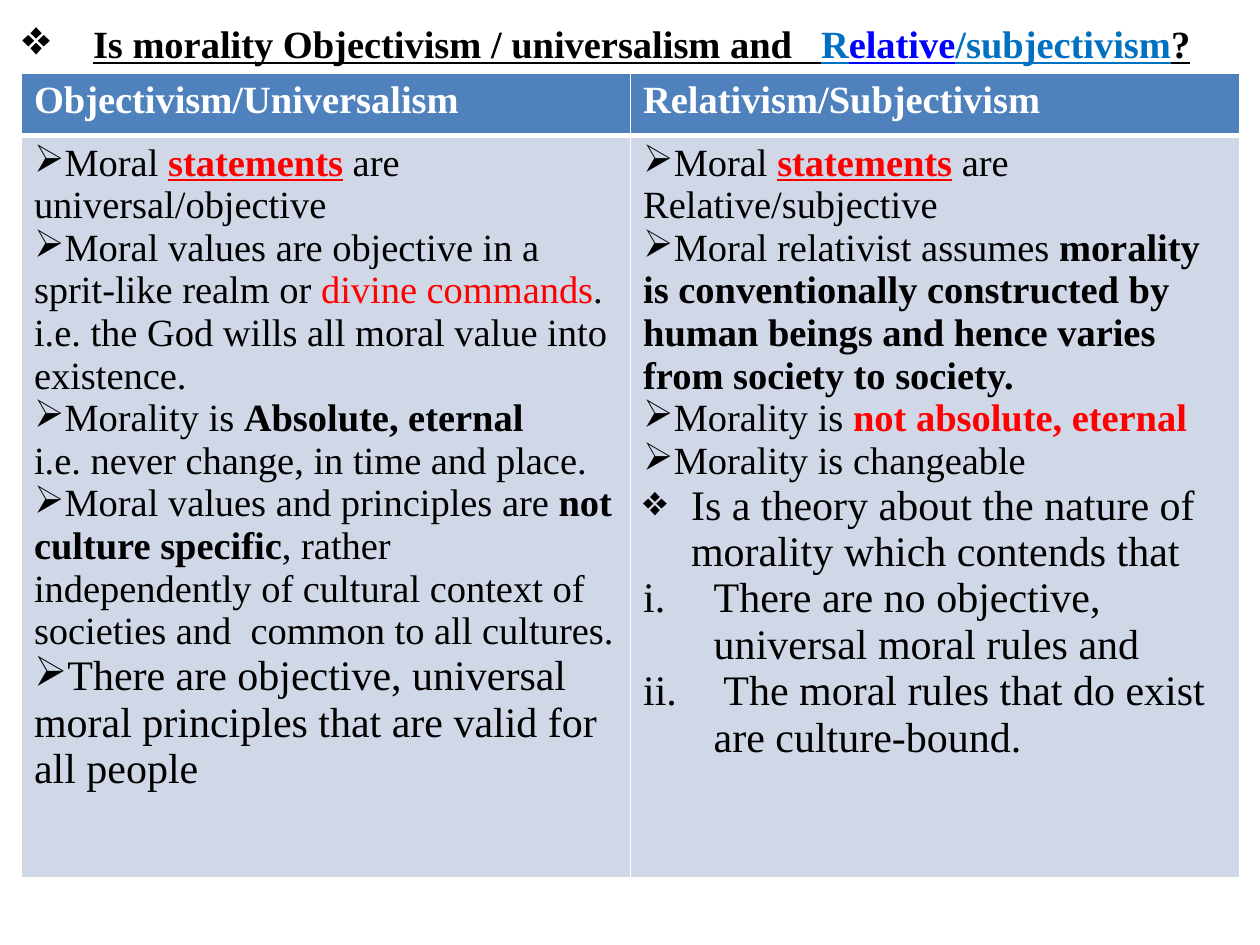
import pptx
import pptx.dml.color
import pptx.oxml.ns
import pptx.util
from lxml import etree

COLORS = {"black": "000000", "white": "FFFFFF", "red": "FF0000",
          "blue": "0070C0", "deep": "0000FF", "head": "4F81BD", "body": "D0D8E8"}
ARROW, DIAMOND = "➢", "❖"

# Spans are (text, style letters): b bold, u underline, and a colour name after a colon
TITLE = [("Is morality Objectivism / universalism and   ", "bu"), ("R", "bu:blue"),
         ("elative", "bu:deep"), ("/subjectivism", "bu:blue"), ("?", "bu")]
HEADINGS = ["Objectivism/Universalism", "Relativism/Subjectivism"]

# Paragraphs are (bullet, size, indent, spans)
OBJECTIVISM = [
    (ARROW, 22, 0, [("Moral ", ""), ("statements", "bu:red"),
                    (" are universal/objective", "")]),
    (ARROW, 22, 0, [("Moral values are objective in a sprit-like realm or ", ""),
                    ("divine commands", ":red"),
                    (". i.e. the God wills all moral value into existence.", "")]),
    (ARROW, 22, 0, [("Morality is ", ""), ("Absolute, eternal", "b")]),
    (None, 22, 0, [("i.e. never change, in time and place.", "")]),
    (ARROW, 22, 0, [("Moral values and principles are ", ""), ("not culture specific", "b"),
                    (", rather  independently of cultural context of societies and  "
                     "common to all cultures.", "")]),
    (ARROW, 24, 0, [("There are objective, universal moral principles that are valid "
                     "for all people", "")]),
]
RELATIVISM = [
    (ARROW, 22, 0, [("Moral ", ""), ("statements", "bu:red"),
                    (" are Relative/subjective", "")]),
    (ARROW, 22, 0, [("Moral relativist assumes ", ""),
                    ("morality is conventionally constructed by human beings and hence "
                     "varies from society to society.", "b")]),
    (ARROW, 22, 0, [("Morality is ", ""), ("not absolute, eternal", "b:red")]),
    (ARROW, 22, 0, [("Morality is changeable", "")]),
    (DIAMOND, 24, 0.38, [("Is a theory about the nature of morality which contends that", "")]),
    ("roman", 24, 0.56, [("There are no objective, universal moral rules and", "")]),
    ("roman", 24, 0.56, [(" The moral rules that do exist are culture-bound.", "")]),
]


def add_element(parent, tag, **attributes):
    return etree.SubElement(parent, pptx.oxml.ns.qn(tag), attributes)


class SlideBuilder:
    font = "Times New Roman"
    width, height = pptx.util.Inches(10), pptx.util.Inches(7.5)

    def __init__(self, deck):
        deck.slide_width, deck.slide_height = self.width, self.height
        self.page = deck.slides.add_slide(deck.slide_layouts[6])

    def area(self, left, top, width, height):
        """Turn shares of the slide into lengths."""
        return (int(left * self.width), int(top * self.height),
                int(width * self.width), int(height * self.height))

    def color(self, name):
        return pptx.dml.color.RGBColor.from_string(COLORS[name])

    def fill_paragraph(self, para, bullet, size, indent, spans, color="black",
                       bullet_scale=100):
        properties = para._p.get_or_add_pPr()
        properties.set("marL", str(pptx.util.Inches(indent)))
        properties.set("indent", str(pptx.util.Inches(-indent)))
        if bullet:
            add_element(properties, "a:buSzPct", val=str(bullet_scale * 1000))
        if bullet == "roman":
            add_element(properties, "a:buAutoNum", type="romanLcPeriod")
        elif bullet:
            add_element(properties, "a:buChar", char=bullet)
        else:
            add_element(properties, "a:buNone")
        for text, style in spans:
            letters, _, tint = style.partition(":")
            span = para.add_run()
            span.text = text
            span.font.name, span.font.size = self.font, pptx.util.Pt(size)
            span.font.bold, span.font.underline = "b" in letters, "u" in letters
            span.font.color.rgb = self.color(tint or color)

    def title(self, area, spans):
        frame = self.page.shapes.add_textbox(*self.area(*area)).text_frame
        frame.word_wrap = True
        frame.margin_top = pptx.util.Inches(0.16)
        self.fill_paragraph(frame.paragraphs[0], DIAMOND, 22, 0.56, spans, bullet_scale=127)

    def cell(self, cell, fill, paragraphs, color="black", bottom=1):
        properties = cell._tc.get_or_add_tcPr()
        for side, points in (("L", 1), ("R", 1), ("T", 1), ("B", bottom)):
            line = add_element(properties, f"a:ln{side}", w=str(pptx.util.Pt(points)))
            add_element(add_element(line, "a:solidFill"), "a:srgbClr", val=COLORS["white"])
        cell.fill.solid()
        cell.fill.fore_color.rgb = self.color(fill)
        frame = cell.text_frame
        for number, content in enumerate(paragraphs):
            para = frame.add_paragraph() if number else frame.paragraphs[0]
            self.fill_paragraph(para, *content, color=color)

    def comparison(self, area, header_share, headings, columns):
        area = self.area(*area)
        table = self.page.shapes.add_table(2, len(headings), *area).table
        table.horz_banding = False
        table.rows[0].height = int(area[3] * header_share)
        table.rows[1].height = area[3] - table.rows[0].height
        for number, (heading, paragraphs) in enumerate(zip(headings, columns)):
            self.cell(table.cell(0, number), "head", [(None, 22, 0, [(heading, "b")])],
                      color="white", bottom=3)
            self.cell(table.cell(1, number), "body", paragraphs)


def main():
    deck = pptx.Presentation()
    slide = SlideBuilder(deck)
    # Question at the top
    slide.title((0.008, 0, 0.992, 0.977), TITLE)
    # Two views side by side
    slide.comparison((0.017, 0.077, 0.967, 0.852), 0.078, HEADINGS,
                     [OBJECTIVISM, RELATIVISM])
    deck.save("out.pptx")


if __name__ == "__main__":
    main()
